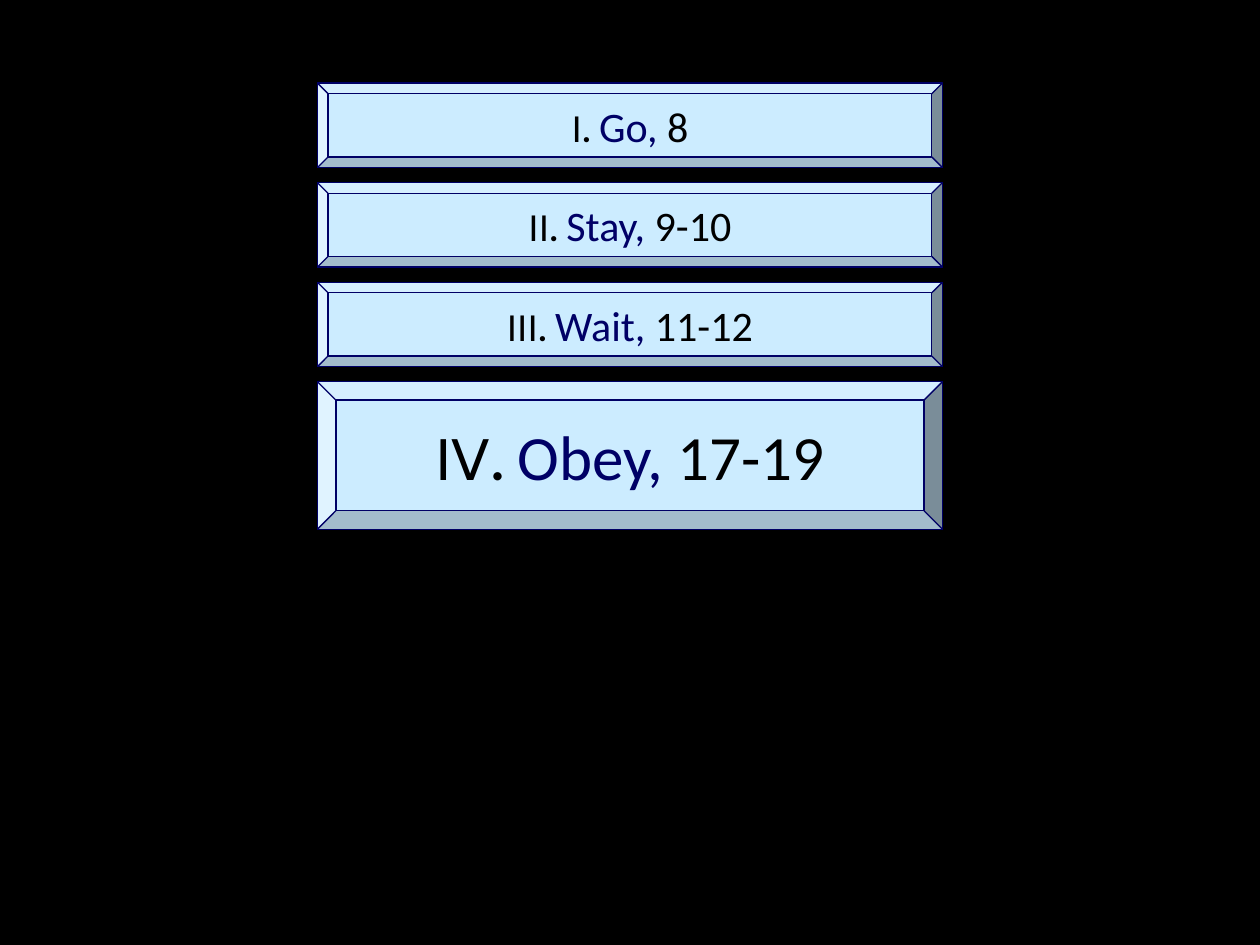
from dataclasses import dataclass

import pptx
import pptx.dml.color
import pptx.enum.shapes
import pptx.enum.text
import pptx.slide
import pptx.util
from pptx.util import Inches


@dataclass(frozen=True)
class Theme:
    background: str = "000000"
    panel: str = "CCECFF"
    accent: str = "000066"
    text: str = "000000"
    font: str = "Calibri"
    numeral_font: str = "DejaVu Sans"
    numeral_size: int = 20
    heading_size: int = 24
    large_numeral_size: int = 32
    large_heading_size: int = 36
    line_width: float = 0.75


@dataclass(frozen=True)
class Point:
    numeral: str
    heading: str
    verses: str
    large: bool = False


THEME = Theme()
LEFT, TOP, WIDTH, GAP = 2.52, 0.66, 4.96, 0.12
HEIGHT, LARGE_HEIGHT = 0.67, 1.17
POINTS = [
    Point("I", "Go", "8"),
    Point("II", "Stay", "9-10"),
    Point("III", "Wait", "11-12"),
    Point("IV", "Obey", "17-19", large=True),
]


def rgb(value: str) -> pptx.dml.color.RGBColor:
    return pptx.dml.color.RGBColor.from_string(value)


def add_point(s: pptx.slide.Slide, point: Point, top: float, height: float) -> None:
    sp = s.shapes.add_shape(
        pptx.enum.shapes.MSO_SHAPE.BEVEL,
        Inches(LEFT), Inches(top), Inches(WIDTH), Inches(height),
    )
    sp.shadow.inherit = False
    sp.fill.solid()
    sp.fill.fore_color.rgb = rgb(THEME.panel)
    sp.line.color.rgb = rgb(THEME.accent)
    sp.line.width = pptx.util.Pt(THEME.line_width)
    tf = sp.text_frame
    tf.word_wrap = False
    tf.vertical_anchor = pptx.enum.text.MSO_ANCHOR.MIDDLE
    p = tf.paragraphs[0]
    p.alignment = pptx.enum.text.PP_ALIGN.CENTER
    small = THEME.large_numeral_size if point.large else THEME.numeral_size
    big = THEME.large_heading_size if point.large else THEME.heading_size
    for text, font, size, color, bold in (
        (point.numeral, THEME.numeral_font, small, THEME.text, False),
        (". ", THEME.font, small, THEME.text, True),
        (f"{point.heading}, ", THEME.font, big, THEME.accent, False),
        (point.verses, THEME.font, big, THEME.text, False),
    ):
        r = p.add_run()
        r.text = text
        r.font.name = font
        r.font.size = pptx.util.Pt(size)
        r.font.color.rgb = rgb(color)
        r.font.bold = bold


def main() -> None:
    prs = pptx.Presentation()
    prs.slide_width, prs.slide_height = Inches(10), Inches(7.5)
    s = prs.slides.add_slide(prs.slide_layouts[6])
    s.background.fill.solid()
    s.background.fill.fore_color.rgb = rgb(THEME.background)
    top = TOP
    for point in POINTS:
        height = LARGE_HEIGHT if point.large else HEIGHT
        add_point(s, point, top, height)
        top += height + GAP
    prs.save("out.pptx")


if __name__ == "__main__":
    main()
